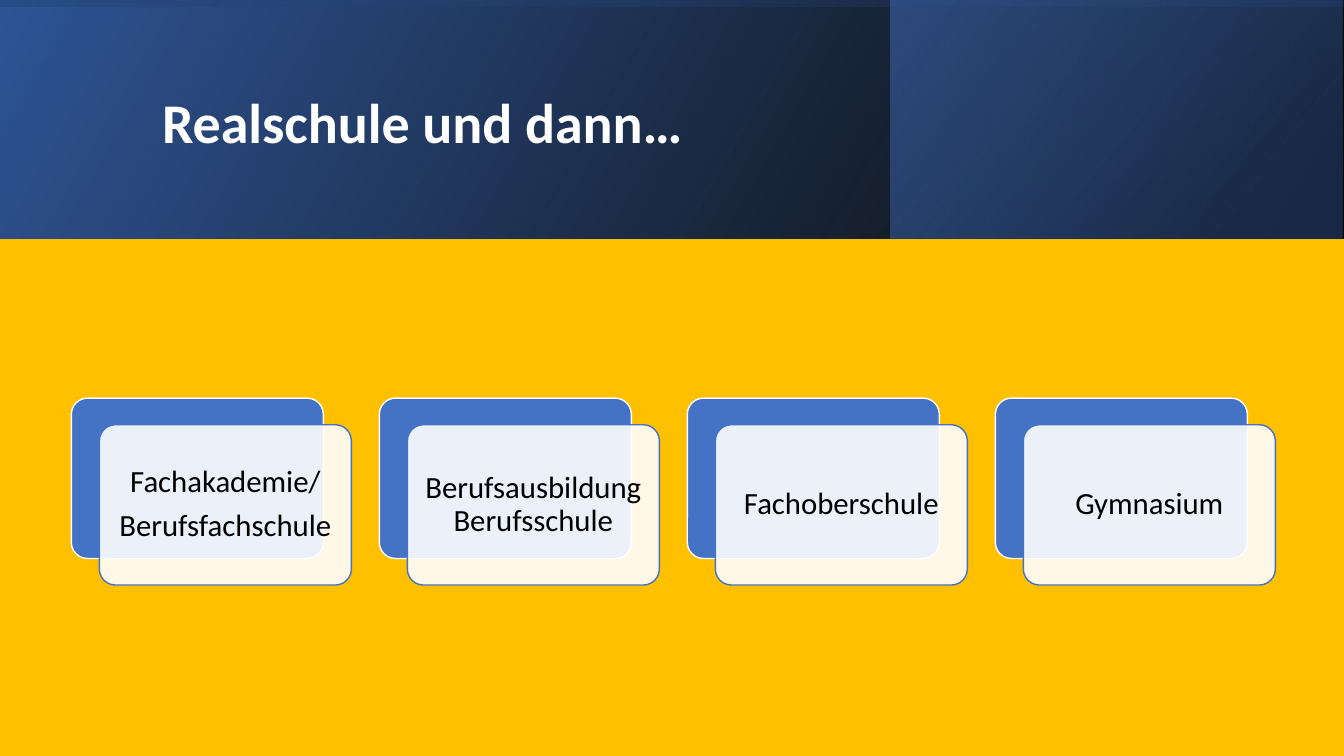
from pptx import Presentation
from pptx.dml.color import RGBColor
from pptx.enum.shapes import MSO_SHAPE
from pptx.enum.text import MSO_ANCHOR, PP_ALIGN
from pptx.oxml import parse_xml
from pptx.oxml.ns import nsdecls, qn
from pptx.util import Pt


def rgb(hex_color):
    return RGBColor.from_string(hex_color)


def add_box(kind, x, y, w, h, fill=None, line=None):
    s = slide.shapes.add_shape(kind, Pt(x), Pt(y), Pt(w), Pt(h))
    s.shadow.inherit = False
    if fill:
        s.fill.solid()
        s.fill.fore_color.rgb = rgb(fill)
    if line:
        s.line.color.rgb = rgb(line)
        s.line.width = Pt(1)
    else:
        s.line.fill.background()
    return s


prs = Presentation()
prs.slide_width, prs.slide_height = Pt(960), Pt(540)
slide = prs.slides.add_slide(prs.slide_layouts[6])
slide.background.fill.solid()
slide.background.fill.fore_color.rgb = rgb("FFC000")

# Header band: layered gradients, stops are (position %, colour, opacity %)
band_h = 170.6
layers = [
    ((0, 0, 960, band_h), 0, 330,
     [(0, "000000", 96), (100, "2F5597", 100)]),
    ((636.2, 0, 323, band_h), 0, 320,
     [(19, "203864", 68), (100, "4472C4", 48)]),
    ((480 - band_h / 2, band_h / 2 - 480, band_h, 960), 270, 350,
     [(23, "2F5597", 16), (99, "000000", 45)]),
]
for frame, rotation, angle, stops in layers:
    s = add_box(MSO_SHAPE.RECTANGLE, *frame)
    s.rotation = rotation
    spPr = s._element.spPr
    spPr.find(qn("a:xfrm")).set("flipH", "1")
    gs = "".join(
        f'<a:gs pos="{pos * 1000}"><a:srgbClr val="{color}">'
        f'<a:alpha val="{alpha * 1000}"/></a:srgbClr></a:gs>'
        for pos, color, alpha in stops)
    grad = parse_xml(
        f'<a:gradFill {nsdecls("a")} rotWithShape="1"><a:gsLst>{gs}</a:gsLst>'
        f'<a:lin ang="{angle * 60000}" scaled="0"/></a:gradFill>')
    spPr.find(qn("a:prstGeom")).addnext(grad)

# Title
tf = slide.shapes.add_textbox(Pt(108.7), Pt(27.4), Pt(765.4), Pt(123.8)).text_frame
tf.word_wrap = True
tf.vertical_anchor = MSO_ANCHOR.MIDDLE
p = tf.paragraphs[0]
p.text = "Realschule und dann…"
p.line_spacing = 0.9
p.font.name, p.font.size, p.font.bold = "Calibri", Pt(40), True
p.font.color.rgb = rgb("FFFFFF")

# Four paths: a blue card behind a translucent white card with the text
paths = [
    ["Fachakademie/", "Berufsfachschule"],
    ["Berufsausbildung Berufsschule"],
    ["Fachoberschule"],
    ["Gymnasium"],
]
card_w, card_h = 180, 114.5
left, top, pitch = 51, 284.4, 220
for i, lines in enumerate(paths):
    x = left + i * pitch
    back = add_box(MSO_SHAPE.ROUNDED_RECTANGLE, x, top, card_w, card_h,
                   "4472C4", "FFFFFF")
    front = add_box(MSO_SHAPE.ROUNDED_RECTANGLE, x + 20, top + 19, card_w, card_h,
                    "FFFFFF", "4472C4")
    for s in (back, front):
        s.adjustments[0] = 0.1
    color = front._element.spPr.find(qn("a:solidFill"))[0]
    color.append(parse_xml(f'<a:alpha {nsdecls("a")} val="90000"/>'))

    tf = front.text_frame
    tf.word_wrap = True
    tf.vertical_anchor = MSO_ANCHOR.MIDDLE
    tf.margin_left = tf.margin_right = tf.margin_top = tf.margin_bottom = Pt(6.6)
    tf.text = "\n".join(lines)
    for p in tf.paragraphs:
        p.alignment = PP_ALIGN.CENTER
        p.line_spacing = 0.9
        p.space_after = Pt(7.7)
        p.font.name, p.font.size = "Calibri", Pt(22)
        p.font.color.rgb = rgb("000000")

prs.save("out.pptx")
